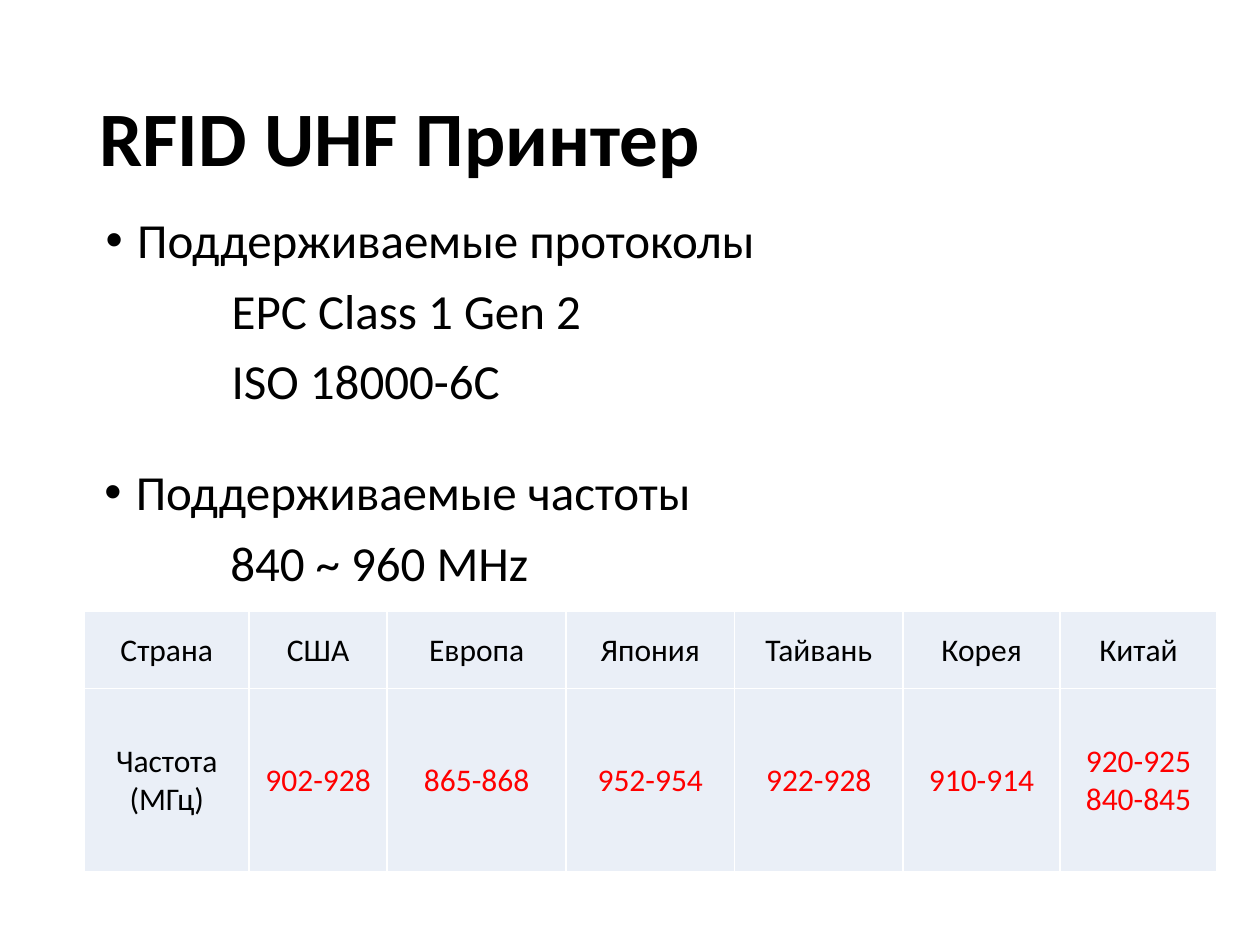
import pptx
import pptx.util
import pptx.dml.color
import pptx.enum.text
import pptx.oxml.ns
import lxml.etree

Pt = pptx.util.Pt
qn = pptx.oxml.ns.qn
MIDDLE = pptx.enum.text.MSO_ANCHOR.MIDDLE
COLORS = {"text": "000000", "value": "FF0000", "cell": "EAEFF7", "border": "FFFFFF"}
FREQUENCIES = {
    "Страна": "Частота\n(МГц)",
    "США": "902-928",
    "Европа": "865-868",
    "Япония": "952-954",
    "Тайвань": "922-928",
    "Корея": "910-914",
    "Китай": "920-925\n840-845",
}
COL_WIDTHS = [94, 79, 102.2, 96.3, 96.3, 89.7, 89.7]
ROW_HEIGHTS = [44, 105]


def rgb(name):
    return pptx.dml.color.RGBColor.from_string(COLORS[name])


def format_runs(p, size, color="text", bold=False):
    for r in p.runs:
        r.font.name = "Calibri"
        r.font.size = Pt(size)
        r.font.bold = bold
        r.font.color.rgb = rgb(color)


def add_text_box(slide, left, top, width, height):
    tf = slide.shapes.add_textbox(Pt(left), Pt(top), Pt(width), Pt(height)).text_frame
    tf.word_wrap = True
    return tf


def add_title(slide, text):
    tf = add_text_box(slide, 49.7, 28.8, 620.6, 104.4)
    tf.vertical_anchor = MIDDLE
    tf.text = text
    p = tf.paragraphs[0]
    p.line_spacing = 0.9
    format_runs(p, 44, bold=True)


def set_bullet(p):
    pPr = p._p.get_or_add_pPr()
    pPr.set("marL", str(Pt(18)))
    pPr.set("indent", str(Pt(-18)))
    lxml.etree.SubElement(pPr, qn("a:buFont"), typeface="Arial")
    lxml.etree.SubElement(pPr, qn("a:buChar"), char="•")


def add_bullet_group(slide, left, top, height, heading, details):
    tf = add_text_box(slide, left, top, 620.6, height)
    tf.text = "\n".join([heading, *details])
    for i, p in enumerate(tf.paragraphs):
        if i == 0:
            set_bullet(p)
        else:
            p._p.get_or_add_pPr().set("marL", str(Pt(72)))
            p.space_before = Pt(10)
        p.line_spacing = 0.9
        format_runs(p, 28)


def set_borders(cell):
    tcPr = cell._tc.get_or_add_tcPr()
    for side in ("lnL", "lnR", "lnT", "lnB"):
        ln = lxml.etree.SubElement(tcPr, qn("a:" + side), w=str(Pt(1)))
        fill = lxml.etree.SubElement(ln, qn("a:solidFill"))
        lxml.etree.SubElement(fill, qn("a:srgbClr"), val=COLORS["border"])


def fill_cell(cell, text, color):
    set_borders(cell)
    cell.fill.solid()
    cell.fill.fore_color.rgb = rgb("cell")
    cell.vertical_anchor = MIDDLE
    cell.margin_left = cell.margin_right = cell.margin_top = Pt(0.72)
    cell.margin_bottom = 0
    p = cell.text_frame.paragraphs[0]
    p.text = text
    p.alignment = pptx.enum.text.PP_ALIGN.CENTER
    format_runs(p, 18, color)


def add_frequency_table(slide, left, top):
    table = slide.shapes.add_table(
        len(ROW_HEIGHTS), len(COL_WIDTHS), Pt(left), Pt(top),
        Pt(sum(COL_WIDTHS)), Pt(sum(ROW_HEIGHTS))).table
    table.first_row = table.horz_banding = False
    for col, width in zip(table.columns, COL_WIDTHS):
        col.width = Pt(width)
    for row, height in zip(table.rows, ROW_HEIGHTS):
        row.height = Pt(height)
    for i, (country, frequency) in enumerate(FREQUENCIES.items()):
        fill_cell(table.cell(0, i), country, "text")
        fill_cell(table.cell(1, i), frequency, "value" if i else "text")


def main():
    prs = pptx.Presentation()
    prs.slide_width, prs.slide_height = Pt(720), Pt(540)
    slide = prs.slides.add_slide(prs.slide_layouts[6])
    add_title(slide, "RFID UHF Принтер")
    add_bullet_group(slide, 53.3, 120.2, 136, "Поддерживаемые протоколы",
                     ["EPC Class 1 Gen 2", "ISO 18000-6C"])
    add_bullet_group(slide, 52.5, 264.2, 85, "Поддерживаемые частоты",
                     ["840 ~ 960 MHz"])
    add_frequency_table(slide, 48.3, 349.4)
    prs.save("out.pptx")


if __name__ == "__main__":
    main()
